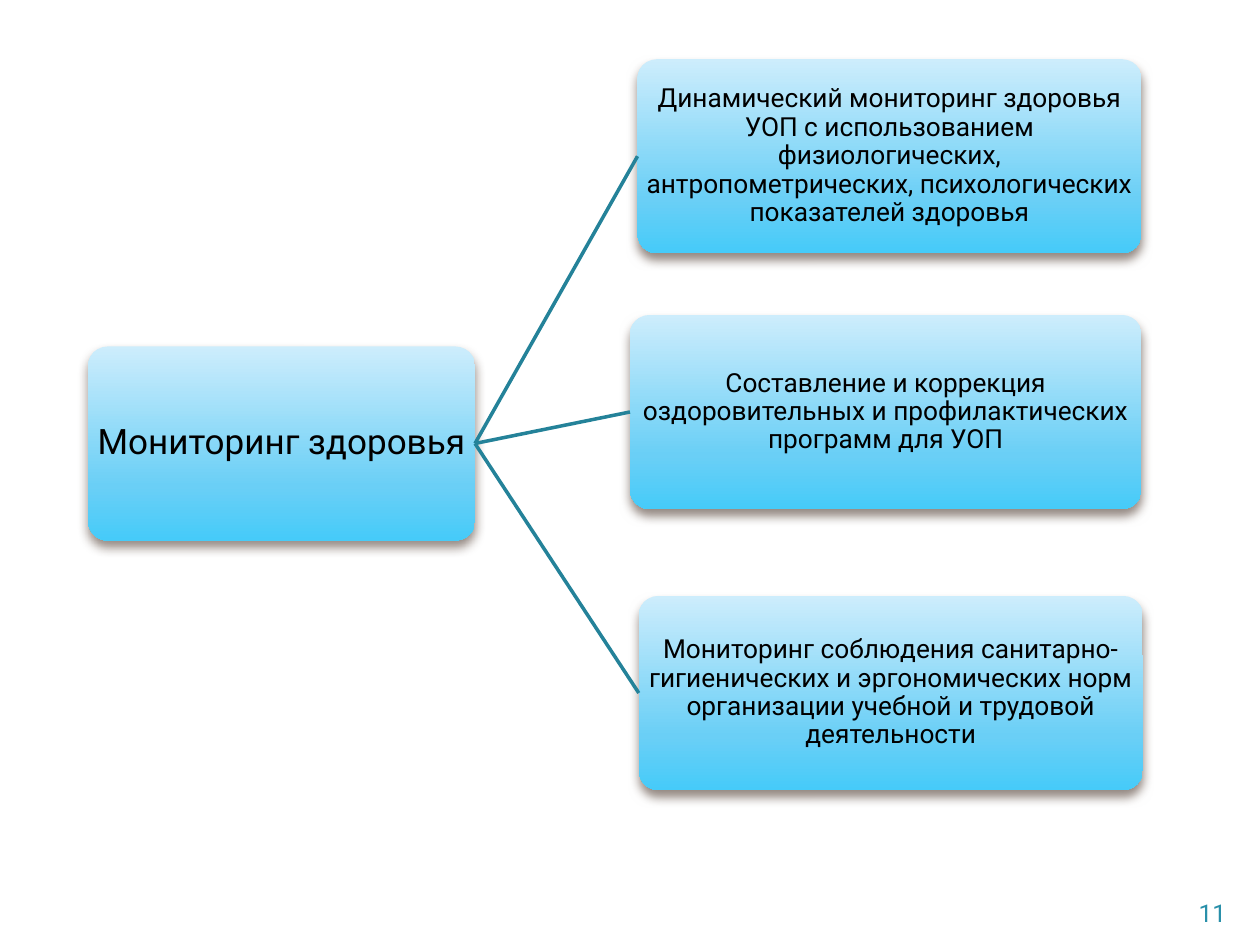
"""Build a slide with a health monitoring tree: one root box and three branches."""
from copy import deepcopy

from lxml import etree
from pptx import Presentation
from pptx.dml.color import RGBColor
from pptx.enum.shapes import MSO_CONNECTOR, MSO_SHAPE
from pptx.enum.text import MSO_ANCHOR, PP_ALIGN
from pptx.oxml.ns import qn
from pptx.util import Inches, Pt

COLORS = {
    "top": "CDEDFC",
    "middle": "6ACFF6",
    "bottom": "46CBF9",
    "shadow": "4E3B30",
    "line": "248299",
    "text": "000000",
    "number": "288FA9",
}
FONT = "Roboto"
ROOT = ("Мониторинг здоровья", 0.7, 2.75, 3.07, 20)
BRANCHES = [
    ("Динамический мониторинг здоровья УОП с использованием физиологических, "
     "антропометрических, психологических показателей здоровья", 5.06, 0.47, 4, 15),
    ("Составление и коррекция оздоровительных и профилактических программ для УОП",
     5, 2.5, 4.06, 15),
    ("Мониторинг соблюдения санитарно-гигиенических и эргономических норм "
     "организации учебной и трудовой деятельности", 5.07, 4.73, 4, 15),
]
BOX_HEIGHT = 1.54


def write_text(frame, text, size, color, alignment):
    frame.word_wrap = True
    paragraph = frame.paragraphs[0]
    paragraph.text = text
    paragraph.alignment = alignment
    paragraph.font.name = FONT
    paragraph.font.size = Pt(size)
    paragraph.font.color.rgb = RGBColor.from_string(COLORS[color])
    return paragraph


def add_box(slide, text, left, top, width, size):
    shape = slide.shapes.add_shape(
        MSO_SHAPE.ROUNDED_RECTANGLE,
        Inches(left), Inches(top), Inches(width), Inches(BOX_HEIGHT))
    shape.adjustments[0] = 0.1
    shape.line.fill.background()

    shape.fill.gradient()
    shape.fill.gradient_angle = 270
    stop_list = shape._element.spPr.find(".//" + qn("a:gsLst"))
    stop_list.insert(1, deepcopy(stop_list[0]))
    gradient = zip(shape.fill.gradient_stops, ("top", "middle", "bottom"), (0, 0.72, 1))
    for stop, color, position in gradient:
        stop.color.rgb = RGBColor.from_string(COLORS[color])
        stop.position = position

    shape.shadow.inherit = False
    effects = shape._element.spPr.find(qn("a:effectLst"))
    shadow = etree.SubElement(
        effects, qn("a:outerShdw"), blurRad=str(Pt(6)), dist=str(Pt(4)),
        dir="5400000", rotWithShape="0")
    shadow_color = etree.SubElement(shadow, qn("a:srgbClr"), val=COLORS["shadow"])
    etree.SubElement(shadow_color, qn("a:alpha"), val="60000")

    frame = shape.text_frame
    frame.vertical_anchor = MSO_ANCHOR.MIDDLE
    frame.margin_left = frame.margin_right = Inches(0.01)
    frame.margin_top = frame.margin_bottom = Inches(0.01)
    paragraph = write_text(frame, text, size, "text", PP_ALIGN.CENTER)
    paragraph.line_spacing = 0.9
    return shape


presentation = Presentation()
presentation.slide_width = Inches(10)
presentation.slide_height = Inches(7.5)
slide = presentation.slides.add_slide(presentation.slide_layouts[6])

root = add_box(slide, *ROOT)
for branch_values in BRANCHES:
    branch = add_box(slide, *branch_values)
    connector = slide.shapes.add_connector(MSO_CONNECTOR.STRAIGHT, 0, 0, 0, 0)
    connector.begin_connect(root, 3)
    connector.end_connect(branch, 1)
    connector.line.color.rgb = RGBColor.from_string(COLORS["line"])
    connector.line.width = Pt(2)
    etree.SubElement(connector._element.spPr, qn("a:effectLst"))

number_box = slide.shapes.add_textbox(Inches(0.51), Inches(7.08), Inches(9.32), Inches(0.27))
write_text(number_box.text_frame, "11", 14, "number", PP_ALIGN.RIGHT)

presentation.save("out.pptx")
